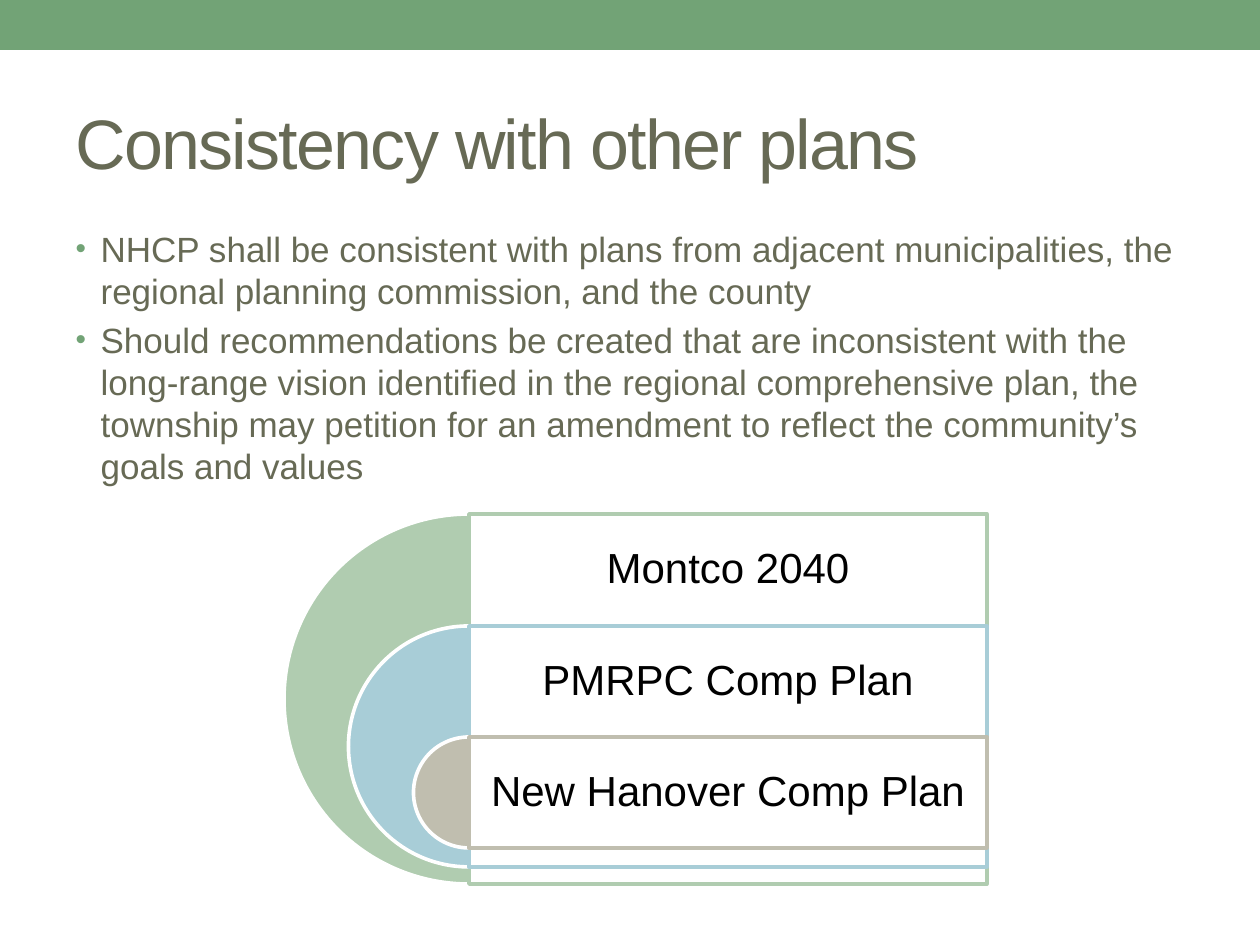
from dataclasses import dataclass

from lxml.etree import SubElement
from pptx import Presentation
from pptx.dml.color import RGBColor
from pptx.enum.shapes import MSO_SHAPE
from pptx.enum.text import MSO_ANCHOR, PP_ALIGN
from pptx.oxml.ns import qn
from pptx.util import Emu, Pt


@dataclass(frozen=True)
class Theme:
    font: str = "Arial"
    text: str = "676A55"
    accent: str = "72A376"
    white: str = "FFFFFF"
    black: str = "000000"
    title_size: int = 40
    body_size: int = 20
    label_size: int = 24
    line_width: float = 2.08


THEME = Theme()
SCALE = 914400 / 126
SLIDE_SIZE = (1260, 945)
ROW_HEIGHT = 111
CENTER_X = 469
PANEL_WIDTH = 518
BULLETS = [
    "NHCP shall be consistent with plans from adjacent municipalities, "
    "the regional planning commission, and the county",
    "Should recommendations be created that are inconsistent with the "
    "long-range vision identified in the regional comprehensive plan, "
    "the township may petition for an amendment to reflect the "
    "community’s goals and values",
]
PLANS = [
    ("Montco 2040", 514, 370, "B0CCB0"),
    ("PMRPC Comp Plan", 626, 241, "A8CDD7"),
    ("New Hanover Comp Plan", 737, 111, "C0BEAF"),
]


def px(n):
    return Emu(round(n * SCALE))


def rgb(value):
    return RGBColor.from_string(value)


def apply(obj, values):
    for name, value in values.items():
        setattr(obj, name, value)


def place(sp, box):
    apply(sp, dict(zip(("left", "top", "width", "height"), map(px, box))))


def add_run(p, text, size, color):
    r = p.add_run()
    r.text = text
    apply(r.font, {"name": THEME.font, "size": Pt(size)})
    r.font.color.rgb = rgb(color)
    return r


def add_shape(s, kind, box, fill, line=None, opacity=None):
    sp = s.shapes.add_shape(kind, *map(px, box))
    sp.shadow.inherit = False
    sp.fill.solid()
    sp.fill.fore_color.rgb = rgb(fill)
    if opacity:
        color = sp.fill._xPr.find(qn("a:solidFill"))[0]
        SubElement(color, qn("a:alpha"), val=str(opacity * 1000))
    if line:
        sp.line.color.rgb = rgb(line)
        sp.line.width = Pt(THEME.line_width)
    else:
        sp.line.fill.background()
    return sp


def set_title(s, text):
    sp = s.shapes.title
    place(sp, (63, 73, 1134, 136))
    tf = sp.text_frame
    tf.vertical_anchor = MSO_ANCHOR.MIDDLE
    p = tf.paragraphs[0]
    p.alignment = PP_ALIGN.LEFT
    r = add_run(p, text, THEME.title_size, THEME.text)
    r.font._element.set("spc", "-100")


def add_bullet(p):
    pPr = p._p.get_or_add_pPr()
    indent = px(25)
    pPr.set("marL", str(indent))
    pPr.set("indent", str(-indent))
    color = SubElement(pPr, qn("a:buClr"))
    SubElement(color, qn("a:srgbClr"), val=THEME.accent)
    SubElement(pPr, qn("a:buSzPct"), val="85000")
    SubElement(pPr, qn("a:buFont"), typeface=THEME.font)
    SubElement(pPr, qn("a:buChar"), char="•")


def set_body(s, items):
    sp = s.placeholders[1]
    place(sp, (63, 221, 1134, 672))
    tf = sp.text_frame
    for i, text in enumerate(items):
        p = tf.add_paragraph() if i else tf.paragraphs[0]
        p.space_before = Pt(4)
        add_bullet(p)
        add_run(p, text, THEME.body_size, THEME.text)


def add_label(s, text, box):
    tf = s.shapes.add_textbox(*map(px, box)).text_frame
    apply(tf, {"word_wrap": True, "vertical_anchor": MSO_ANCHOR.MIDDLE})
    margins = ("margin_left", "margin_top", "margin_right", "margin_bottom")
    apply(tf, dict.fromkeys(margins, px(13)))
    p = tf.paragraphs[0]
    apply(p, {"alignment": PP_ALIGN.CENTER, "line_spacing": 0.9})
    add_run(p, text, THEME.label_size, THEME.black)


def add_plan(s, name, top, size, color):
    circle = (CENTER_X - size / 2, top, size, size)
    pie = add_shape(s, MSO_SHAPE.PIE, circle, color, THEME.white)
    pie.adjustments[0] = 54
    pie.adjustments[1] = 162
    panel = (CENTER_X, top, PANEL_WIDTH, size)
    add_shape(s, MSO_SHAPE.RECTANGLE, panel, THEME.white, color, opacity=90)
    add_label(s, name, (CENTER_X, top, PANEL_WIDTH, ROW_HEIGHT))


def main():
    prs = Presentation()
    prs.slide_width, prs.slide_height = map(px, SLIDE_SIZE)
    s = prs.slides.add_slide(prs.slide_layouts[1])
    add_shape(s, MSO_SHAPE.RECTANGLE, (0, 0, SLIDE_SIZE[0], 50), THEME.accent)
    set_title(s, "Consistency with other plans")
    set_body(s, BULLETS)
    for plan in PLANS:
        add_plan(s, *plan)
    prs.save("out.pptx")


if __name__ == "__main__":
    main()
